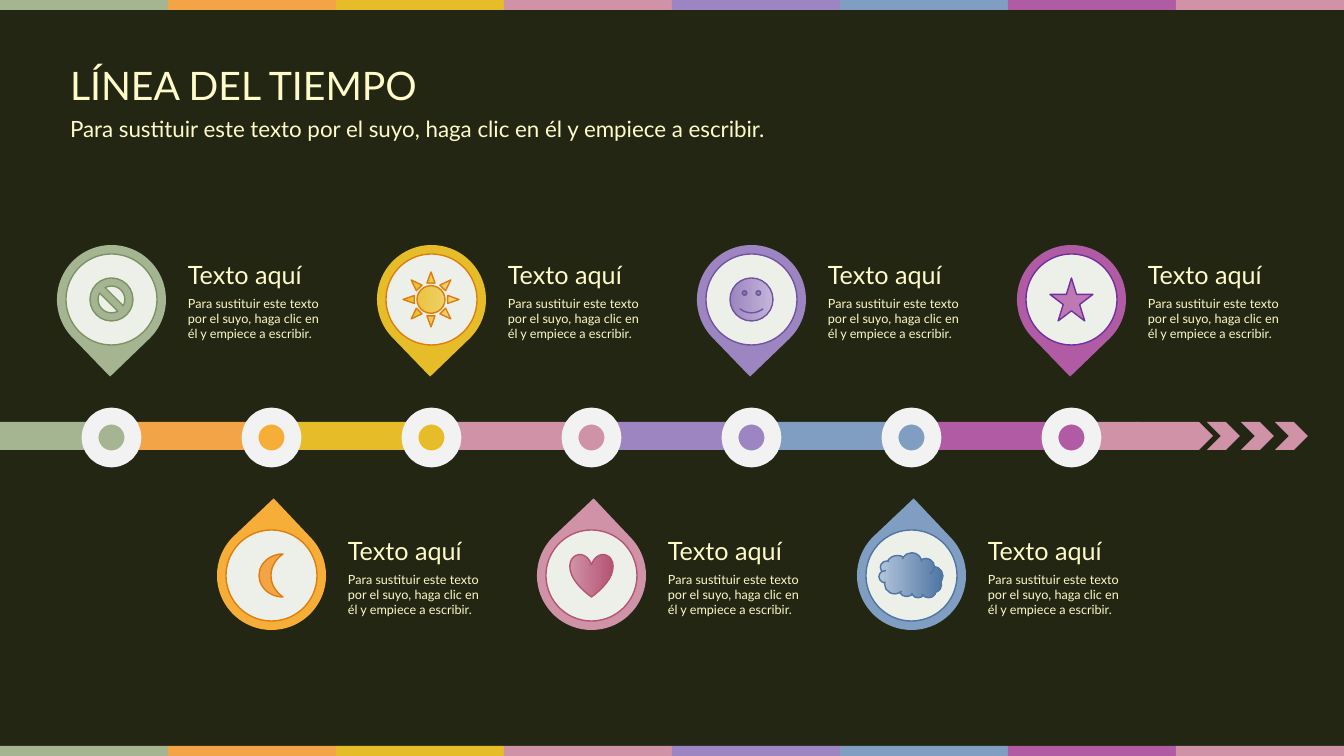
from dataclasses import dataclass

from pptx import Presentation
from pptx import util as u
from pptx.dml import color
from pptx.enum import shapes, text

Kind = shapes.MSO_SHAPE
EMU_PER_PX = 914400 / 100.8
SLIDE_WIDTH, SLIDE_HEIGHT = 1344, 756


@dataclass(frozen=True)
class Theme:
    font: str = "Lato"
    background: str = "222613"
    text: str = "FEFAC9"
    disc: str = "EDF0E9"
    dot_ring: str = "F2F2F2"
    green: str = "A5B592"
    orange: str = "F3A447"
    amber: str = "F6AE39"
    yellow: str = "E7BC29"
    pink: str = "D092A7"
    purple: str = "9C85C0"
    blue: str = "809EC2"
    magenta: str = "B05BA4"
    green_line: str = "7C9263"
    orange_line: str = "DD7E0E"
    pink_line: str = "B55475"
    purple_line: str = "7153A1"
    blue_line: str = "4E75A3"
    magenta_line: str = "7030A0"
    pale_yellow: str = "F1D77F"
    pale_purple: str = "C4B6D9"
    pale_blue: str = "B3C5DA"
    pale_magenta: str = "BD79B4"
    title_size: int = 28
    subtitle_size: int = 16
    heading_size: int = 18
    detail_size: int = 9
    thin_line: int = 1
    ring_line: int = 12


THEME = Theme()


@dataclass(frozen=True)
class Box:
    left: int
    top: int
    width: int
    height: int


@dataclass(frozen=True)
class Milestone:
    accent: str
    outline: str
    icon: Kind
    icon_fill: tuple[str, ...]
    icon_width: int = 43
    icon_height: int = 43
    flipped: bool = False


MILESTONES = (
    Milestone(THEME.green, THEME.green_line, Kind.NO_SYMBOL, (THEME.green,)),
    Milestone(THEME.amber, THEME.orange_line, Kind.MOON, (THEME.orange,), 24),
    Milestone(THEME.yellow, THEME.orange_line, Kind.SUN,
              (THEME.yellow, THEME.pale_yellow), 56, 55),
    Milestone(THEME.pink, THEME.pink_line, Kind.HEART, (THEME.pink, THEME.pink_line)),
    Milestone(THEME.purple, THEME.purple_line, Kind.SMILEY_FACE,
              (THEME.purple, THEME.pale_purple)),
    Milestone(THEME.blue, THEME.blue_line, Kind.CLOUD,
              (THEME.pale_blue, THEME.blue_line), 64, 45, True),
    Milestone(THEME.magenta, THEME.magenta_line, Kind.STAR_5_POINT, (THEME.pale_magenta,)),
)
BAND_COLORS = (THEME.green, THEME.orange, THEME.yellow, THEME.pink,
               THEME.purple, THEME.blue, THEME.magenta, THEME.pink)

FIRST_CENTER, STEP = 111, 160
AXIS_Y, UPPER_Y, LOWER_Y = 437, 299, 575
BAR_TOP, BAR_HEIGHT, BAR_FIRST_END = 422, 28, 114
STRIP_WIDTH, STRIP_HEIGHT = 168, 10
DOT_SIZE, PIN_SIZE, DISC_SIZE = 43, 109, 91
CHEVRON_LEFT, CHEVRON_WIDTH, CHEVRON_STEP = 1207, 33, 34

HEADING = "Texto aquí"
PROMPT = "Para sustituir este texto por el suyo, haga clic en él y empiece a escribir."


def px(length: int) -> u.Emu:
    return u.Emu(round(length * EMU_PER_PX))


def rgb(value: str) -> color.RGBColor:
    return color.RGBColor.from_string(value)


def centered(x: int, y: int, width: int, height: int) -> Box:
    return Box(x - width // 2, y - height // 2, width, height)


def place(shape, box: Box) -> None:
    shape.left, shape.top = px(box.left), px(box.top)
    shape.width, shape.height = px(box.width), px(box.height)


def add_figure(slide, kind: Kind, box: Box, fill: tuple[str, ...],
               outline: str = "", line_width: int = THEME.thin_line):
    """Draw a preset shape; two fill colours make a left-to-right gradient."""
    shape = slide.shapes.add_shape(
        kind, px(box.left), px(box.top), px(box.width), px(box.height))
    shape.shadow.inherit = False
    if len(fill) == 1:
        shape.fill.solid()
        shape.fill.fore_color.rgb = rgb(fill[0])
    else:
        shape.fill.gradient()
        shape.fill.gradient_angle = 0
        for position, (stop, value) in enumerate(zip(shape.fill.gradient_stops, fill)):
            stop.position = position
            stop.color.rgb = rgb(value)
    if outline:
        shape.line.color.rgb = rgb(outline)
        shape.line.width = u.Pt(line_width)
    else:
        shape.line.fill.background()
    return shape


def write(shape, wording: str, size: int) -> None:
    frame = shape.text_frame
    frame.word_wrap = True
    frame.auto_size = text.MSO_AUTO_SIZE.NONE
    frame.vertical_anchor = text.MSO_ANCHOR.TOP
    frame.text = wording
    paragraph = frame.paragraphs[0]
    paragraph.alignment = text.PP_ALIGN.LEFT
    paragraph.space_before = u.Pt(0)
    paragraph.font.name = THEME.font
    paragraph.font.size = u.Pt(size)
    paragraph.font.color.rgb = rgb(THEME.text)


def add_label(slide, box: Box, wording: str, size: int) -> None:
    label = slide.shapes.add_textbox(0, 0, 0, 0)
    place(label, box)
    write(label, wording, size)


def fill_headings(slide) -> None:
    title, subtitle = slide.placeholders
    headings = (
        (title, Box(0, 56, 1348, 58), "LÍNEA DEL TIEMPO", THEME.title_size),
        (subtitle, Box(0, 110, 1348, 37), PROMPT, THEME.subtitle_size),
    )
    for placeholder, box, wording, size in headings:
        place(placeholder, box)
        write(placeholder, wording, size)
        placeholder.text_frame.margin_left = px(70)


def add_strips(slide) -> None:
    for top in (0, SLIDE_HEIGHT - STRIP_HEIGHT):
        for index, band in enumerate(BAND_COLORS):
            box = Box(index * STRIP_WIDTH, top, STRIP_WIDTH, STRIP_HEIGHT)
            add_figure(slide, Kind.RECTANGLE, box, (band,))


def add_axis(slide) -> None:
    ends = [0] + [BAR_FIRST_END + STEP * index for index in range(len(MILESTONES))] + [1139]
    for left, right, band in zip(ends, ends[1:], BAND_COLORS):
        add_figure(slide, Kind.RECTANGLE, Box(left, BAR_TOP, right - left, BAR_HEIGHT), (band,))
    add_figure(slide, Kind.PENTAGON, Box(1137, BAR_TOP, 76, BAR_HEIGHT), (THEME.pink,))
    for index in range(3):
        box = Box(CHEVRON_LEFT + CHEVRON_STEP * index, BAR_TOP, CHEVRON_WIDTH, BAR_HEIGHT)
        add_figure(slide, Kind.CHEVRON, box, (THEME.pink,))


def add_milestone(slide, milestone: Milestone, x: int, upper: bool) -> None:
    y = UPPER_Y if upper else LOWER_Y
    accent = (milestone.accent,)
    add_figure(slide, Kind.OVAL, centered(x, AXIS_Y, DOT_SIZE, DOT_SIZE), accent,
               THEME.dot_ring, THEME.ring_line)
    pin = add_figure(slide, Kind.TEAR, centered(x, y, PIN_SIZE, PIN_SIZE), accent)
    pin.rotation = 136 if upper else 316.6
    add_figure(slide, Kind.OVAL, centered(x, y, DISC_SIZE, DISC_SIZE), (THEME.disc,),
               milestone.outline)
    icon_box = centered(x, y, milestone.icon_width, milestone.icon_height)
    icon = add_figure(slide, milestone.icon, icon_box, milestone.icon_fill, milestone.outline)
    if milestone.flipped:
        icon._element.spPr.xfrm.set("flipV", "1")
    add_label(slide, Box(x + 67, y - 45, 154, 40), HEADING, THEME.heading_size)
    add_label(slide, Box(x + 67, y - 8, 153, 55), PROMPT, THEME.detail_size)


def main() -> None:
    presentation = Presentation()
    presentation.slide_width, presentation.slide_height = px(SLIDE_WIDTH), px(SLIDE_HEIGHT)
    slide = presentation.slides.add_slide(presentation.slide_layouts[0])
    slide.background.fill.solid()
    slide.background.fill.fore_color.rgb = rgb(THEME.background)
    fill_headings(slide)
    add_axis(slide)
    for index, milestone in enumerate(MILESTONES):
        add_milestone(slide, milestone, FIRST_CENTER + STEP * index, index % 2 == 0)
    add_strips(slide)
    presentation.save("out.pptx")


if __name__ == "__main__":
    main()
